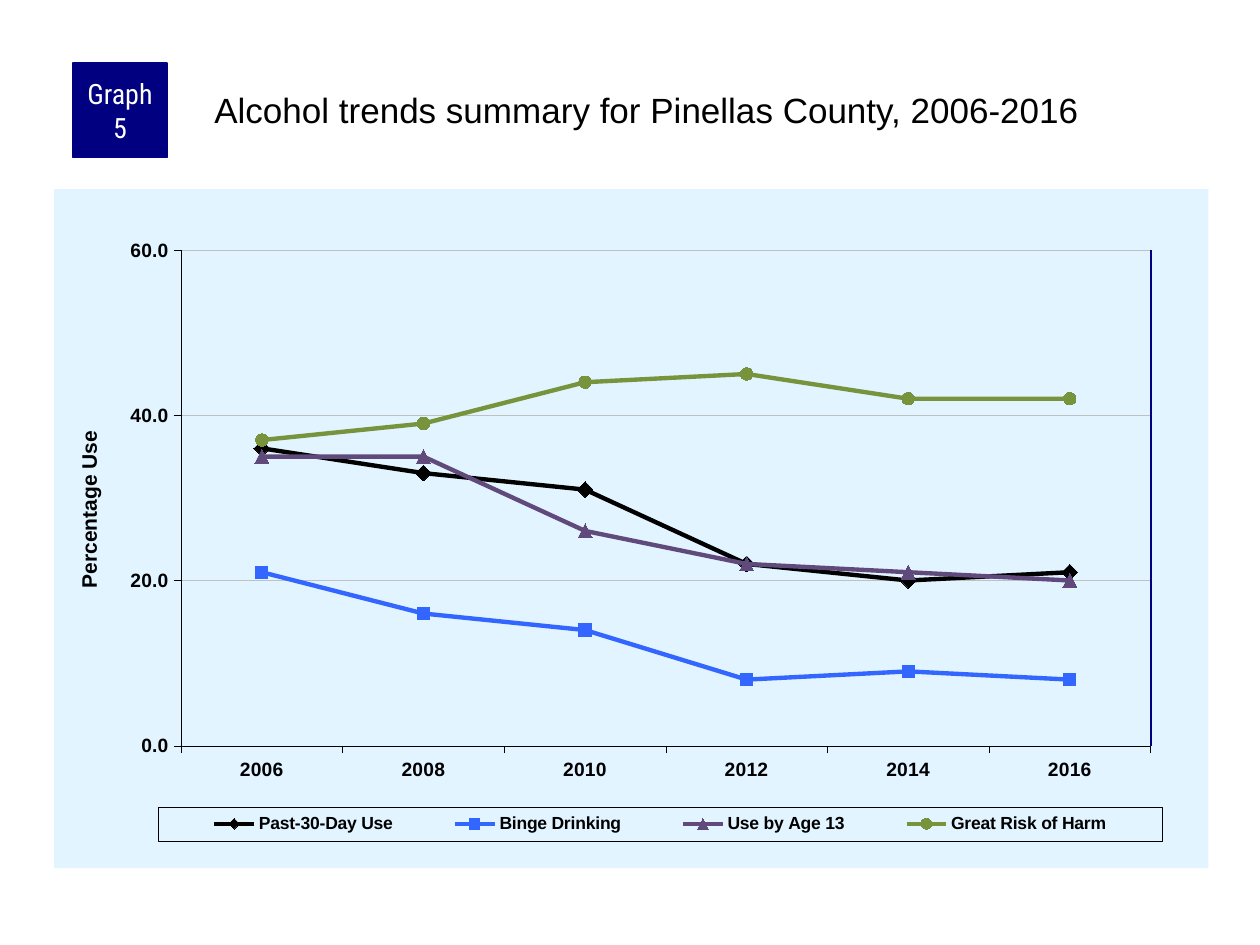
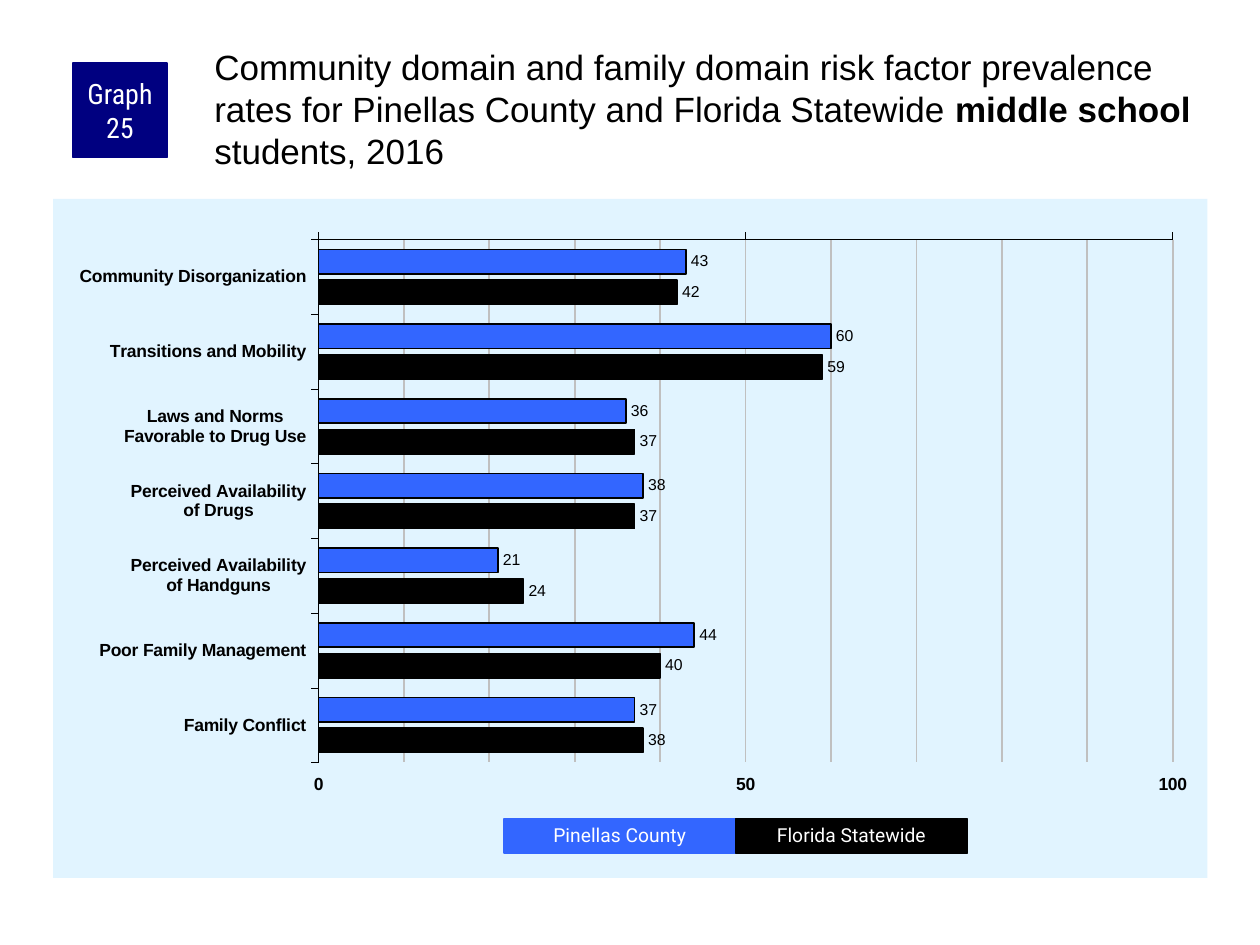
"""Build two slides of charts on youth substance use in Pinellas County."""
import copy

import pptx
import pptx.chart.data
import pptx.dml.color
import pptx.enum.chart
import pptx.enum.shapes
import pptx.enum.text
import pptx.oxml
import pptx.oxml.ns
import pptx.util
from pptx.util import Cm, Pt

NAVY, BLACK, WHITE = "000080", "000000", "FFFFFF"
BLUE, PURPLE, GREEN = "3366FF", "604A7B", "77933C"
PANEL, GRID = "E1F4FF", "C0C0C0"
CHART_SIZE = (23.27, 13.69)
XML_NAMES = pptx.oxml.ns.nsdecls("c", "a")


def rgb(color):
    return pptx.dml.color.RGBColor.from_string(color)


def set_font(font, size, color=BLACK, name="Arial", bold=False):
    font.size = Pt(size)
    font.name = name
    font.bold = bold
    font.color.rgb = rgb(color)


def set_line(line, color, width):
    line.color.rgb = rgb(color)
    line.width = Pt(width)


def set_fill(fill, color):
    fill.solid()
    fill.fore_color.rgb = rgb(color)


def write_text(paragraph, text, **font_format):
    run = paragraph.add_run()
    run.text = text
    set_font(run.font, **font_format)


def set_margins(text_frame, left, top, right, bottom):
    text_frame.margin_left, text_frame.margin_top = Cm(left), Cm(top)
    text_frame.margin_right, text_frame.margin_bottom = Cm(right), Cm(bottom)


def add_box(slide, text, bounds, fill, size, font_name, line_spacing=1.0):
    shape = slide.shapes.add_shape(
        pptx.enum.shapes.MSO_SHAPE.RECTANGLE, *map(Cm, bounds))
    shape.shadow.inherit = False
    set_fill(shape.fill, fill)
    set_line(shape.line, fill, 0.75)
    text_frame = shape.text_frame
    text_frame.word_wrap = True
    text_frame.vertical_anchor = pptx.enum.text.MSO_ANCHOR.MIDDLE
    set_margins(text_frame, 0.13, 0, 0.13, 0)
    paragraph = text_frame.paragraphs[0]
    paragraph.alignment = pptx.enum.text.PP_ALIGN.CENTER
    paragraph.line_spacing = line_spacing
    write_text(paragraph, text, size=size, color=WHITE, name=font_name)


def add_graph_slide(presentation, graph_number, title_top, title_parts):
    slide = presentation.slides.add_slide(presentation.slide_layouts[5])
    title = slide.shapes.title
    title.left, title.top, title.width, title.height = map(
        Cm, (4.24, title_top, 20.12, 2.11))
    text_frame = title.text_frame
    text_frame.word_wrap = True
    text_frame.auto_size = pptx.enum.text.MSO_AUTO_SIZE.NONE
    text_frame.vertical_anchor = pptx.enum.text.MSO_ANCHOR.TOP
    set_margins(text_frame, 0.08, 0.08, 0, 0)
    paragraph = text_frame.paragraphs[0]
    paragraph.alignment = pptx.enum.text.PP_ALIGN.LEFT
    for text, bold in title_parts:
        write_text(paragraph, text, size=20, bold=bold)
    add_box(slide, f"Graph {graph_number}", (1.47, 1.27, 1.9, 1.9), NAVY, 16,
            "Roboto Condensed")
    return slide


def add_line(slide, start, end, color, width):
    connector = slide.shapes.add_connector(
        pptx.enum.shapes.MSO_CONNECTOR.STRAIGHT, *map(Cm, start + end))
    set_line(connector.line, color, width)
    connector.element.spPr.append(pptx.oxml.parse_xml(f"<a:effectLst {XML_NAMES}/>"))


def set_layout(element, index, bounds, inner=False):
    for old_layout in element.findall(pptx.oxml.ns.qn("c:layout")):
        element.remove(old_layout)
    target = '<c:layoutTarget val="inner"/>' if inner else ""
    modes = "".join(f'<c:{axis}Mode val="edge"/>' for axis in "xy")
    sizes = "".join(f'<c:{key} val="{value}"/>' for key, value in zip("xywh", bounds))
    element.insert(index, pptx.oxml.parse_xml(
        f"<c:layout {XML_NAMES}><c:manualLayout>{target}{modes}{sizes}"
        "</c:manualLayout></c:layout>"))


def style_axis(axis, size):
    set_font(axis.tick_labels.font, size, bold=True)
    set_line(axis.format.line, BLACK, 0.25)
    axis.major_tick_mark = pptx.enum.chart.XL_TICK_MARK.OUTSIDE
    axis.minor_tick_mark = pptx.enum.chart.XL_TICK_MARK.NONE


def add_panel_chart(slide, chart_type, position, categories, series, plot_bounds,
                    axis_size, maximum, major_unit, grid_width, number_format):
    data = pptx.chart.data.CategoryChartData()
    data.categories = categories
    for name, values in series:
        data.add_series(name, values)
    chart = slide.shapes.add_chart(
        chart_type, *map(Cm, position + CHART_SIZE), data).chart
    chart.has_title = False
    chart.has_legend = False
    set_font(chart.font, 10)
    chart_space = chart._chartSpace
    chart_space.chart.addnext(pptx.oxml.parse_xml(
        f'<c:spPr {XML_NAMES}><a:solidFill><a:srgbClr val="{PANEL}"/></a:solidFill>'
        "<a:ln><a:noFill/></a:ln></c:spPr>"))
    set_layout(chart_space.chart.plotArea, 0, plot_bounds, inner=True)
    chart.plots[0].vary_by_categories = False
    style_axis(chart.category_axis, axis_size)
    value_axis = chart.value_axis
    style_axis(value_axis, axis_size)
    value_axis.minimum_scale, value_axis.maximum_scale = 0, maximum
    value_axis.major_unit = major_unit
    value_axis.has_major_gridlines = True
    set_line(value_axis.major_gridlines.format.line, GRID, grid_width)
    value_axis.tick_labels.number_format = number_format
    value_axis.tick_labels.number_format_is_linked = False
    return chart


def add_minor_gridlines(chart, unit):
    chart.value_axis.minor_unit = unit
    chart.value_axis.has_minor_gridlines = True
    value_axis = chart._chartSpace.xpath(".//c:valAx")[0]
    major_style = value_axis.xpath("c:majorGridlines/c:spPr")[0]
    value_axis.xpath("c:minorGridlines")[0].append(copy.deepcopy(major_style))


def add_boxed_legend(chart, bounds):
    chart.has_legend = True
    legend = chart.legend
    legend.position = pptx.enum.chart.XL_LEGEND_POSITION.BOTTOM
    legend.include_in_layout = False
    set_font(legend.font, 10, bold=True)
    element = legend._element
    set_layout(element, 1, bounds)
    element.find(pptx.oxml.ns.qn("c:txPr")).addprevious(pptx.oxml.parse_xml(
        f'<c:spPr {XML_NAMES}><a:noFill/><a:ln w="3175"><a:solidFill>'
        f'<a:srgbClr val="{BLACK}"/></a:solidFill></a:ln></c:spPr>'))


def add_value_title(chart, text):
    title_frame = chart.value_axis.axis_title.text_frame
    write_text(title_frame.paragraphs[0], text, size=12, bold=True)
    for body in chart._chartSpace.xpath(".//c:valAx/c:title//a:bodyPr"):
        body.set("rot", "-5400000")
        body.set("vert", "horz")


def add_trend_chart(slide):
    marker_style = pptx.enum.chart.XL_MARKER_STYLE
    trends = [
        ("Past-30-Day Use", (36, 33, 31, 22, 20, 21), BLACK, marker_style.DIAMOND, 9),
        ("Binge Drinking", (21, 16, 14, 8, 9, 8), BLUE, marker_style.SQUARE, 7),
        ("Use by Age 13", (35, 35, 26, 22, 21, 20), PURPLE, marker_style.TRIANGLE, 8),
        ("Great Risk of Harm", (37, 39, 44, 45, 42, 42), GREEN, marker_style.CIRCLE, 7),
    ]
    chart = add_panel_chart(
        slide, pptx.enum.chart.XL_CHART_TYPE.LINE_MARKERS, (1.09, 3.81),
        [str(year) for year in range(2006, 2017, 2)],
        [trend[:2] for trend in trends], (0.11, 0.09, 0.84, 0.73),
        axis_size=11, maximum=60, major_unit=20, grid_width=0.25, number_format="0.0")
    add_value_title(chart, "Percentage Use")
    add_boxed_legend(chart, (0.09, 0.91, 0.87, 0.05))
    for series, (_, _, color, style, size) in zip(chart.plots[0].series, trends):
        series.smooth = False
        set_line(series.format.line, color, 2.5)
        series.marker.style, series.marker.size = style, size
        set_fill(series.marker.format.fill, color)
        set_line(series.marker.format.line, color, 0.75)
    add_line(slide, (23.2, 5.04), (23.2, 15.03), NAVY, 1.5)


def add_risk_chart(slide):
    categories = [
        "Community Disorganization", "Transitions and Mobility",
        "Laws and Norms\nFavorable to Drug Use", "Perceived Availability\nof Drugs",
        "Perceived Availability\nof Handguns", "Poor Family Management",
        "Family Conflict"]
    regions = [
        ("Pinellas County", (43, 60, 36, 38, 21, 44, 37), BLUE),
        ("Florida Statewide", (42, 59, 37, 37, 24, 40, 38), BLACK)]
    chart = add_panel_chart(
        slide, pptx.enum.chart.XL_CHART_TYPE.BAR_CLUSTERED, (1.07, 4.01), categories,
        [region[:2] for region in regions], (0.23, 0.06, 0.74, 0.77),
        axis_size=10, maximum=100, major_unit=50, grid_width=1, number_format="0")
    chart.category_axis.reverse_order = True
    chart.value_axis.tick_label_position = pptx.enum.chart.XL_TICK_LABEL_POSITION.HIGH
    add_minor_gridlines(chart, 10)
    plot = chart.plots[0]
    plot.gap_width, plot.overlap = 80, -25
    box_width = 4.67
    for index, (series, (name, _, color)) in enumerate(zip(plot.series, regions)):
        set_fill(series.format.fill, color)
        set_line(series.format.line, BLACK, 1)
        labels = series.data_labels
        labels.show_value = True
        labels.position = pptx.enum.chart.XL_LABEL_POSITION.OUTSIDE_END
        set_font(labels.font, 9)
        add_box(slide, name, (10.16 + index * box_width, 16.51, box_width, 0.69),
                color, 11, "Roboto", line_spacing=0.9)


def main():
    presentation = pptx.Presentation()
    presentation.slide_width, presentation.slide_height = Cm(25.4), Cm(19.05)
    add_trend_chart(add_graph_slide(
        presentation, 5, 1.7,
        [("Alcohol trends summary for Pinellas County, 2006-2016", False)]))
    add_risk_chart(add_graph_slide(
        presentation, 25, 0.84,
        [("Community domain and family domain risk factor prevalence rates for "
          "Pinellas County and Florida Statewide ", False),
         ("middle school", True), (" students, 2016", False)]))
    presentation.save("out.pptx")


if __name__ == "__main__":
    main()
